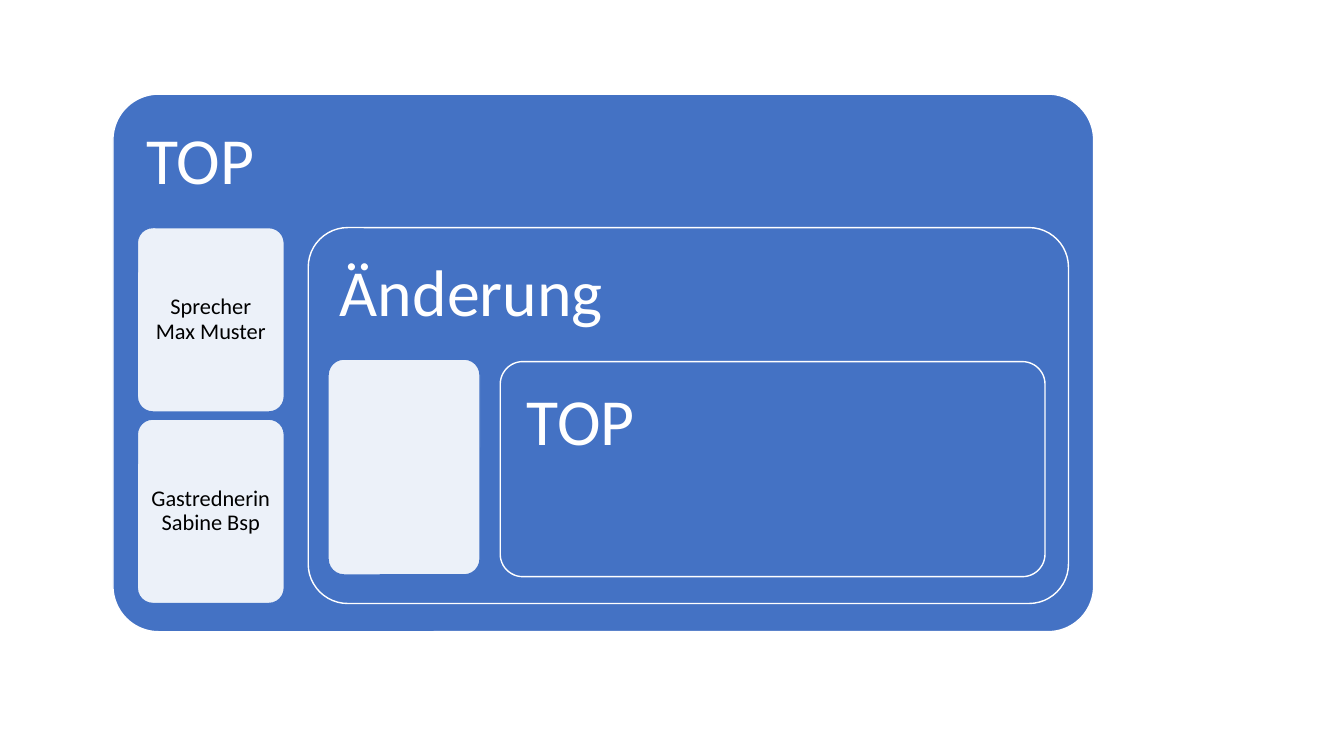
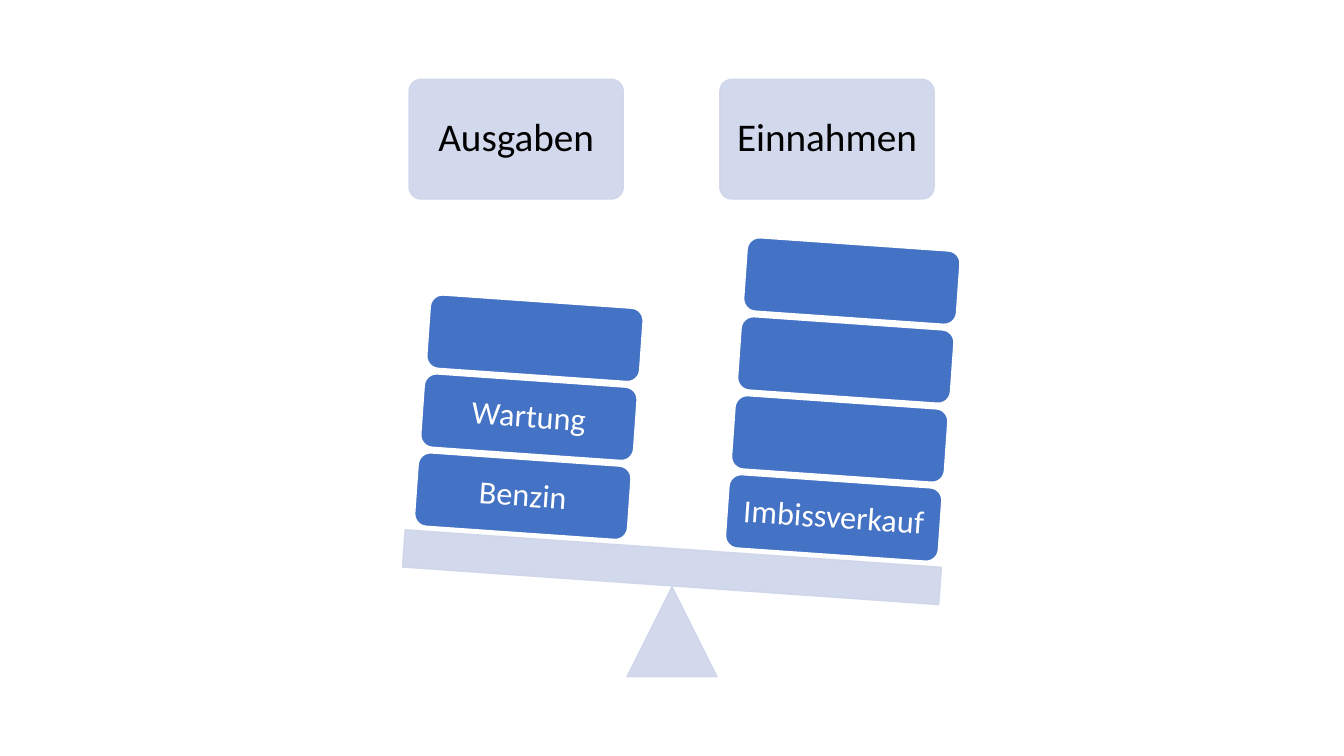
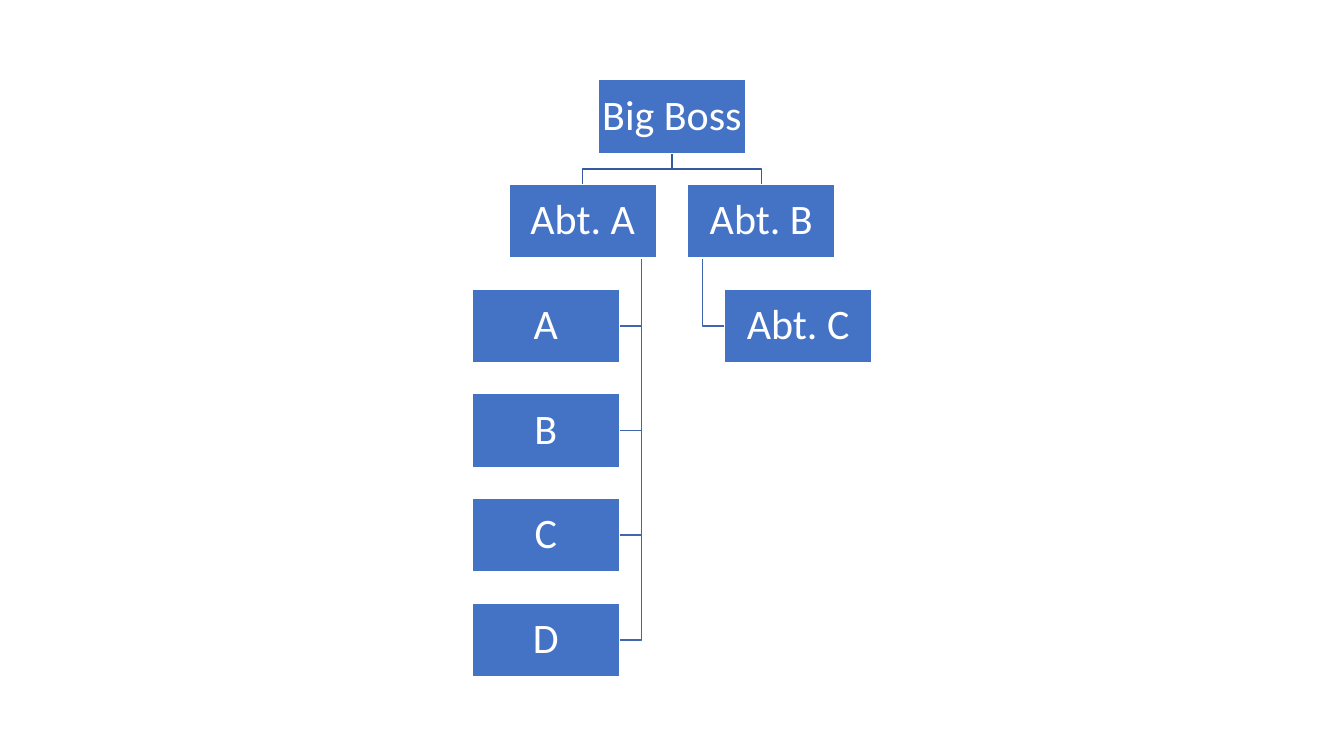
from math import radians, tan

from lxml import etree
from pptx import Presentation
from pptx.dml.color import RGBColor
from pptx.enum.shapes import MSO_SHAPE
from pptx.enum.text import MSO_ANCHOR, PP_ALIGN
from pptx.oxml.ns import qn
from pptx.util import Inches, Pt

RECTANGLE = MSO_SHAPE.RECTANGLE
ROUNDED = MSO_SHAPE.ROUNDED_RECTANGLE
TRIANGLE = MSO_SHAPE.ISOSCELES_TRIANGLE
TOP, MIDDLE = MSO_ANCHOR.TOP, MSO_ANCHOR.MIDDLE
LEFT, CENTER = PP_ALIGN.LEFT, PP_ALIGN.CENTER

COLUMNS, ROWS = 160, 90
COLORS = {
    "blue": "4472C4",
    "pale": "CFD5EA",
    "white": "FFFFFF",
    "black": "000000",
    "trunk": "365B9D",
    "branch": "3E67B2",
}


class Deck:
    """Holds the style and the current slide; lengths are grid units."""

    font = "Calibri"
    line_width = Pt(1)
    opacity = 90

    def __init__(self):
        self.presentation = Presentation()
        self.presentation.slide_width = Inches(13.333)
        self.presentation.slide_height = Inches(7.5)
        self.unit = self.presentation.slide_height / ROWS
        self.slide = None

    def length(self, units):
        return round(units * self.unit)

    def new_slide(self):
        layout = self.presentation.slide_layouts[6]
        self.slide = self.presentation.slides.add_slide(layout)

    def paint(self, fill, color, translucent=False):
        fill.solid()
        fill.fore_color.rgb = RGBColor.from_string(COLORS[color])
        if translucent:
            for node in fill._xPr.iter(qn("a:srgbClr")):
                alpha = etree.SubElement(node, qn("a:alpha"))
                alpha.set("val", str(self.opacity * 1000))

    def box(self, kind, left, top, width, height, fill="blue", line="white",
            rounding=None, rotation=0):
        shape = self.slide.shapes.add_shape(
            kind, *map(self.length, (left, top, width, height)))
        shape.shadow.inherit = False
        shape.rotation = rotation
        if rounding is not None:
            shape.adjustments[0] = rounding
        self.paint(shape.fill, fill, fill != "blue")
        shape.line.width = self.line_width
        self.paint(shape.line.fill, line, line == "pale")
        return shape

    def label(self, shape, text, size, inset, color="white",
              anchor=MIDDLE, alignment=CENTER):
        frame = shape.text_frame
        frame.text = text
        frame.word_wrap = True
        frame.vertical_anchor = anchor
        frame.margin_left = frame.margin_right = self.length(inset)
        frame.margin_top = frame.margin_bottom = self.length(inset)
        paragraph = frame.paragraphs[0]
        paragraph.alignment = alignment
        paragraph.line_spacing = 0.9
        font = paragraph.runs[0].font
        font.name = self.font
        font.size = Pt(size)
        font.color.rgb = RGBColor.from_string(COLORS[color])

    def polyline(self, points, color):
        start, *rest = [tuple(map(self.length, point)) for point in points]
        builder = self.slide.shapes.build_freeform(*start)
        builder.add_line_segments(rest, close=False)
        shape = builder.convert_to_shape()
        shape.shadow.inherit = False
        shape.fill.background()
        shape.line.width = self.line_width
        self.paint(shape.line.fill, color)


def nested_agenda(deck):
    deck.new_slide()

    def panel(text, left, top, width, height, rounding=0.105):
        shape = deck.box(ROUNDED, left, top, width, height, rounding=rounding)
        deck.label(shape, text, 47, 2.4, anchor=TOP, alignment=LEFT)

    def card(left, top, width, height):
        return deck.box(ROUNDED, left, top, width, height, "white", "blue", 0.105)

    panel("TOP", 13.45, 11.2, 116.75, 64, rounding=0.085)
    for index, speaker in enumerate(["Sprecher Max Muster", "Gastrednerin Sabine Bsp"]):
        shape = card(16.35, 27.1 + index * 22.8, 17.5, 21.95)
        deck.label(shape, speaker, 16, 1, "black")
    panel("Änderung", 36.7, 27.1, 90.5, 44.75)
    card(39.05, 42.75, 18.1, 25.7)
    panel("TOP", 59.55, 43.05, 64.85, 25.6)


def balance(deck):
    deck.new_slide()
    tilt, side_step = 4, 37
    block_shift, block_step = 0.72, 9.4
    sides = [
        ("Ausgaben", ["Benzin", "Wartung", ""]),
        ("Einnahmen", ["Imbissverkauf", "", "", ""]),
    ]
    deck.box(TRIANGLE, 74.65, 69.85, 10.7, 10.7, "pale", "pale")
    deck.box(RECTANGLE, 48, 65.3, 64, 4.45, "pale", "pale", rotation=tilt)
    for side, (heading, blocks) in enumerate(sides):
        offset = side * side_step
        shape = deck.box(ROUNDED, 48.7 + offset, 9.45, 25.5, 14.25,
                         "pale", "pale", rounding=0.1)
        deck.label(shape, heading, 28, 1.4, "black")
        base = 54.7 + offset * tan(radians(tilt))
        for level, text in enumerate(blocks):
            shape = deck.box(ROUNDED, 49.55 + offset + level * block_shift,
                             base - level * block_step, 25.4, 8.75, rotation=tilt)
            if text:
                deck.label(shape, text, 23, 1.2)


def organisation_chart(deck):
    deck.new_slide()
    width, height, row_step, first_top = 17.55, 8.75, 12.46, 9.5
    boss_center = COLUMNS / 2
    boxes = [("Big Boss", boss_center, 0)]
    departments = [("Abt. A", -1, ["A", "B", "C", "D"]), ("Abt. B", 1, ["Abt. C"])]

    def row_top(row):
        return first_top + row * row_step

    boss_bottom, department_top = row_top(0) + height, row_top(1)
    fork = (boss_bottom + department_top) / 2
    for name, side, members in departments:
        center = boss_center + side * 10.63
        boxes.append((name, center, 1))
        deck.polyline([(boss_center, boss_bottom), (boss_center, fork),
                       (center, fork), (center, department_top)], "trunk")
        stem = center - side * width * 0.4
        member_center = center + side * width / 4
        member_edge = member_center - side * width / 2
        for row, member in enumerate(members, start=2):
            boxes.append((member, member_center, row))
            middle = row_top(row) + height / 2
            deck.polyline([(stem, department_top + height), (stem, middle),
                           (member_edge, middle)], "branch")
    for name, center, row in boxes:
        shape = deck.box(RECTANGLE, center - width / 2, row_top(row), width, height)
        deck.label(shape, name, 30, 0.24)


def main():
    deck = Deck()
    nested_agenda(deck)
    balance(deck)
    organisation_chart(deck)
    deck.presentation.save("out.pptx")


if __name__ == "__main__":
    main()
